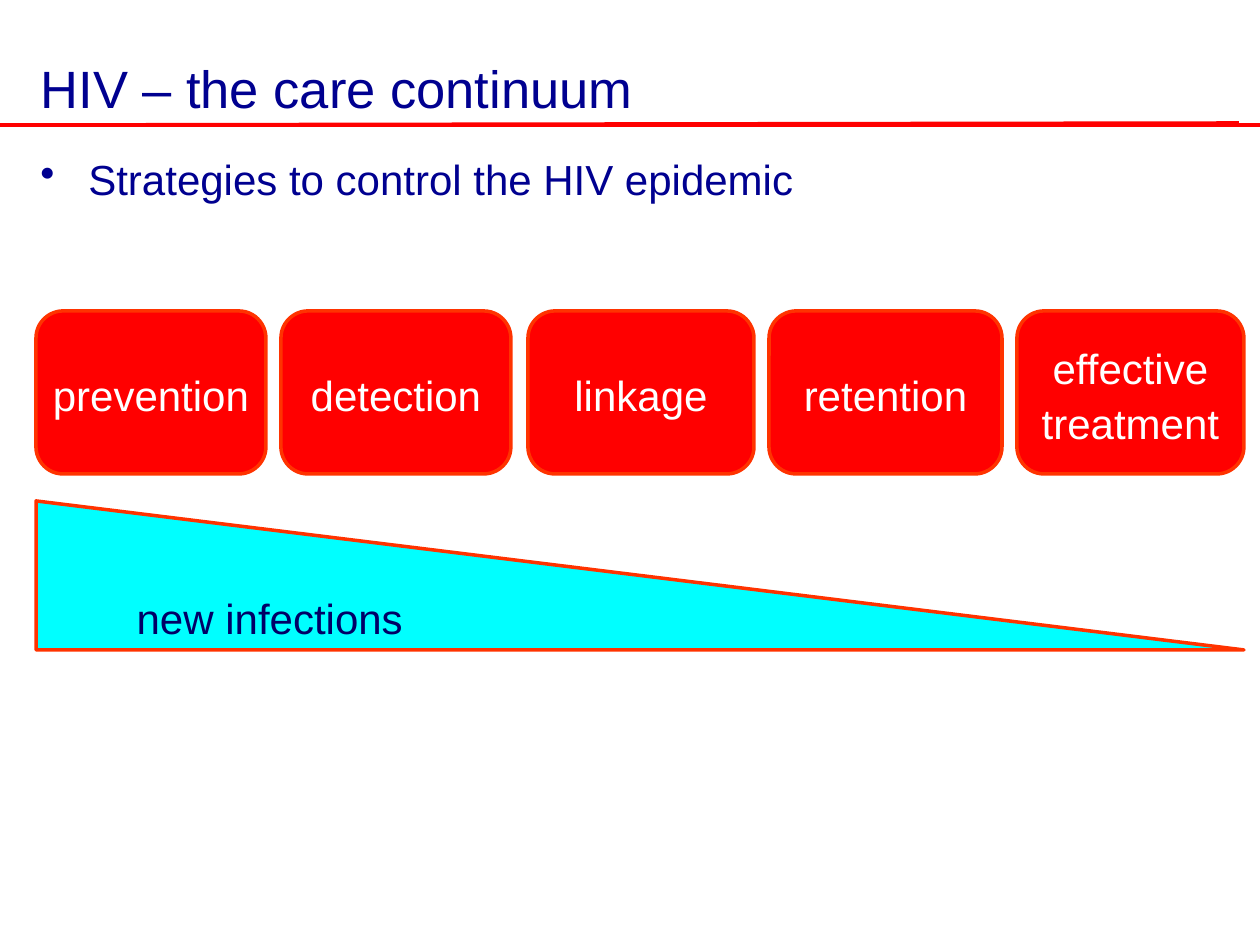
import pptx
import pptx.dml.color
import pptx.enum.shapes
import pptx.enum.text
import pptx.oxml.ns
import pptx.util
from lxml import etree

EMU_PER_PX = 914400 // 126
FONT = "Arial"
WHITE = pptx.dml.color.RGBColor(0xFF, 0xFF, 0xFF)
RED = pptx.dml.color.RGBColor(0xFF, 0x00, 0x00)
ORANGE = pptx.dml.color.RGBColor(0xFF, 0x33, 0x00)
CYAN = pptx.dml.color.RGBColor(0x00, 0xFF, 0xFF)
BLUE = pptx.dml.color.RGBColor(0x00, 0x00, 0x90)
NAVY = pptx.dml.color.RGBColor(0x00, 0x00, 0x66)

SHAPES = pptx.enum.shapes.MSO_SHAPE
ALIGN = pptx.enum.text.PP_ALIGN
ANCHOR = pptx.enum.text.MSO_ANCHOR

STAGE_TOP, STAGE_HEIGHT = 311, 163
# Care stage, left edge and width in px
STAGES = [
    ("prevention", 36, 230),
    ("detection", 281, 230),
    ("linkage", 528, 226),
    ("retention", 769, 233),
    ("effective treatment", 1017, 227),
]


def px(length):
    return pptx.util.Emu(length * EMU_PER_PX)


def write(frame, text, size, color, align=ALIGN.LEFT):
    """Put one run of text in the first paragraph of a frame."""
    para = frame.paragraphs[0]
    para.alignment = align
    para.line_spacing = 1.1
    span = para.add_run()
    span.text = text
    span.font.name = FONT
    span.font.size = pptx.util.Pt(size)
    span.font.color.rgb = color


def fit_to_text(frame):
    frame.word_wrap = False
    frame.auto_size = pptx.enum.text.MSO_AUTO_SIZE.SHAPE_TO_FIT_TEXT
    frame.vertical_anchor = ANCHOR.TOP


def set_title(page, text):
    title = page.shapes.title
    title.left, title.top, title.width, title.height = px(28), px(43), px(624), px(82)
    fit_to_text(title.text_frame)
    write(title.text_frame, text, 30, BLUE)


def add_rule(page, start, end, weight):
    rule = page.shapes.add_connector(
        pptx.enum.shapes.MSO_CONNECTOR.STRAIGHT, *map(px, start + end))
    rule.line.color.rgb = RED
    rule.line.width = pptx.util.Pt(weight)
    etree.SubElement(rule._element.spPr, pptx.oxml.ns.qn("a:effectLst"))


def add_bullet(page, text, left, top, width, height):
    box = page.shapes.add_textbox(px(left), px(top), px(width), px(height))
    fit_to_text(box.text_frame)
    properties = box.text_frame.paragraphs[0]._p.get_or_add_pPr()
    indent = px(48)
    properties.set("marL", str(indent))
    properties.set("indent", str(-indent))
    bullet = etree.SubElement(properties, pptx.oxml.ns.qn("a:buChar"))
    bullet.set("char", "•")
    write(box.text_frame, text, 24, BLUE)


def add_block(page, kind, bounds, fill, text, color, align, anchor):
    """Add a filled, outlined shape with text and no insets."""
    block = page.shapes.add_shape(kind, *map(px, bounds))
    block.shadow.inherit = False
    block.fill.solid()
    block.fill.fore_color.rgb = fill
    block.line.color.rgb = ORANGE
    block.line.width = pptx.util.Pt(2)
    frame = block.text_frame
    frame.word_wrap = True
    frame.vertical_anchor = anchor
    frame.margin_left = frame.margin_top = frame.margin_right = frame.margin_bottom = 0
    write(frame, text, 24, color, align)


def main():
    deck = pptx.Presentation()
    deck.slide_width, deck.slide_height = px(1260), px(945)
    page = deck.slides.add_slide(deck.slide_layouts[5])

    set_title(page, "HIV – the care continuum")
    add_rule(page, (25, 125), (1239, 123), 2)
    add_rule(page, (0, 125), (1260, 125), 2.25)
    add_bullet(page, "Strategies to control the HIV epidemic", 28, 142, 784, 63)

    for name, left, width in STAGES:
        add_block(page, SHAPES.ROUNDED_RECTANGLE,
                  (left, STAGE_TOP, width, STAGE_HEIGHT),
                  RED, name, WHITE, ALIGN.CENTER, ANCHOR.MIDDLE)
    add_block(page, SHAPES.RIGHT_TRIANGLE, (36, 501, 1208, 149),
              CYAN, "new infections", NAVY, ALIGN.LEFT, ANCHOR.TOP)

    deck.save("out.pptx")


if __name__ == "__main__":
    main()
